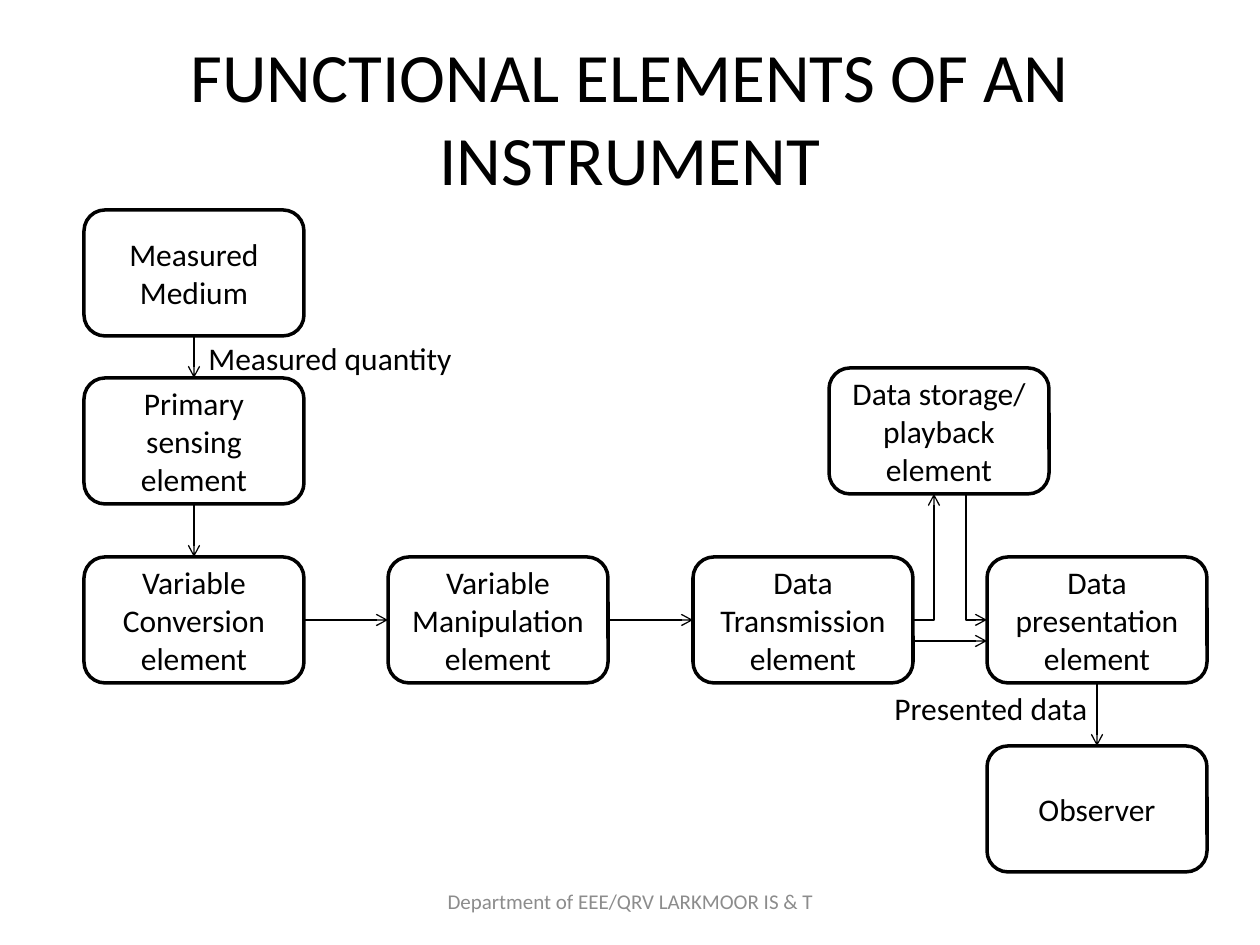
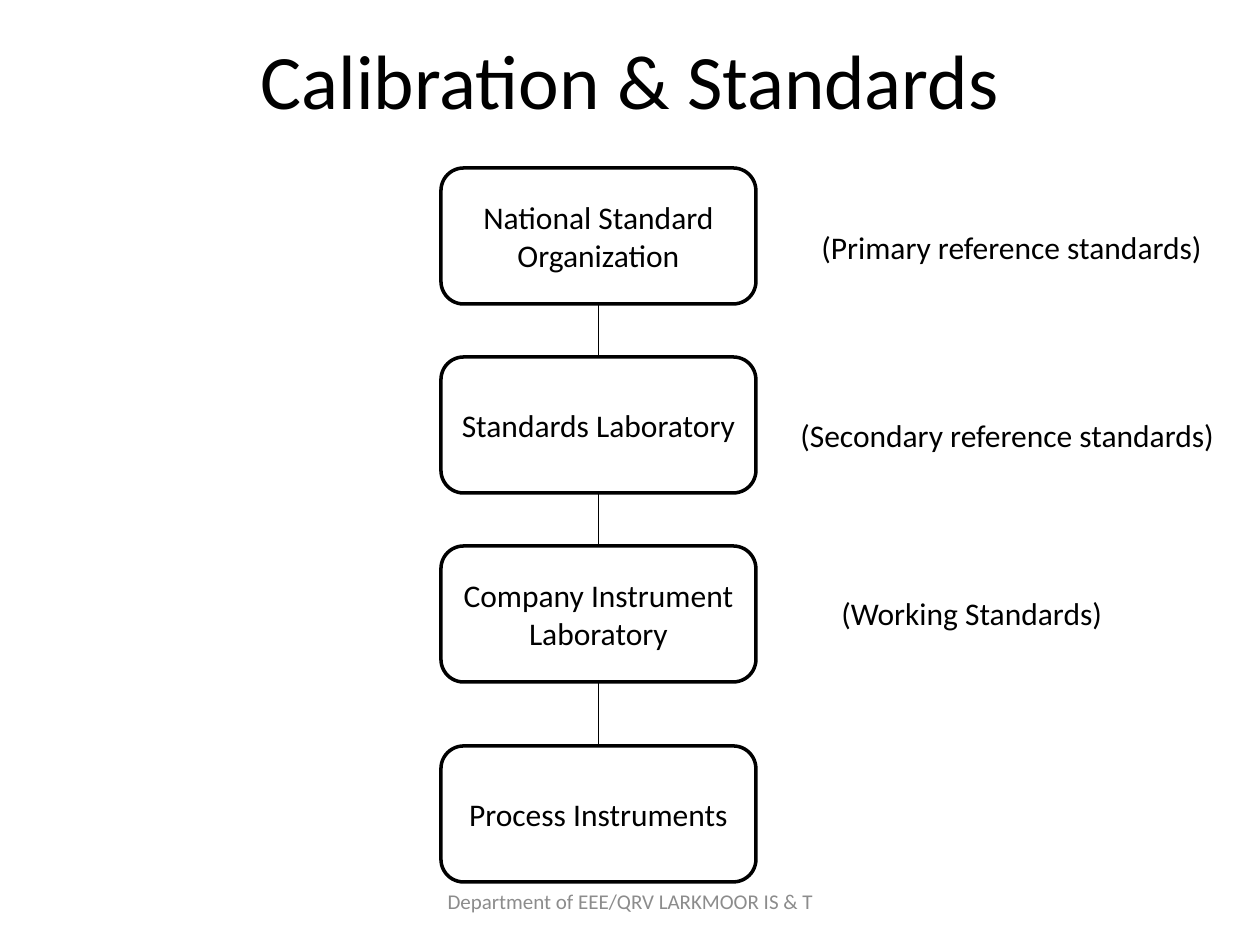
from lxml import etree
from pptx import Presentation
from pptx.dml.color import RGBColor
from pptx.enum.shapes import MSO_CONNECTOR, MSO_SHAPE
from pptx.enum.text import MSO_ANCHOR, MSO_AUTO_SIZE, PP_ALIGN
from pptx.oxml.ns import qn
from pptx.util import Emu, Pt

STRAIGHT, ELBOW = MSO_CONNECTOR.STRAIGHT, MSO_CONNECTOR.ELBOW
ROUNDED = MSO_SHAPE.ROUNDED_RECTANGLE
LEFT, CENTER = PP_ALIGN.LEFT, PP_ALIGN.CENTER
MIDDLE, TOP = MSO_ANCHOR.MIDDLE, MSO_ANCHOR.TOP
TOP_SIDE, LEFT_SIDE, BOTTOM_SIDE, RIGHT_SIDE = range(4)
TITLE_ONLY = 5

FONT = "Calibri"
COLORS = {"ink": "000000", "paper": "FFFFFF", "footer": "8C8C8C"}
FOOTER = "Department of EEE/QRV LARKMOOR IS & T"
LABEL_HEIGHT = 50

# Functional elements: name -> (text, left, top)
COLUMNS = [84, 388, 693, 987]
CHAIN_TOP = 557
ELEMENT_SIZE = (220, 126)
ELEMENTS = {
    "medium": ("Measured Medium", COLUMNS[0], 210),
    "storage": ("Data storage/ playback element", 829, 368),
    "sensing": ("Primary sensing element", COLUMNS[0], 378),
    "conversion": ("Variable Conversion element", COLUMNS[0], CHAIN_TOP),
    "manipulation": ("Variable Manipulation element", COLUMNS[1], CHAIN_TOP),
    "transmission": ("Data Transmission element", COLUMNS[2], CHAIN_TOP),
    "presentation": ("Data presentation element", COLUMNS[3], CHAIN_TOP),
    "observer": ("Observer", COLUMNS[3], 746),
}
DOWN_FLOWS = [("medium", "sensing"), ("sensing", "conversion"),
              ("presentation", "observer")]
RIGHT_FLOWS = [("conversion", "manipulation"), ("manipulation", "transmission")]
# (text, left, top, width)
FLOW_LABELS = [("Measured quantity", 196, 333, 272),
               ("Presented data", 882, 683, 220)]

# Calibration levels: (text, top)
LEVEL_LEFT, LEVEL_SIZE = 441, (315, 136)
LEVELS = [("National Standard Organization", 168),
          ("Standards Laboratory", 357),
          ("Company Instrument Laboratory", 546),
          ("Process Instruments", 746)]
LEVEL_LABELS = [("(Primary reference standards)", 809, 222, 411),
                ("(Secondary reference standards)", 788, 410, 443),
                ("(Working Standards)", 829, 588, 289)]


def px(*lengths):
    """Turn pixels, 126 to the inch, into EMU."""
    return [Emu(round(length * 914400 / 126)) for length in lengths]


def write(frame, text, size=18, color="ink", align=CENTER, anchor=MIDDLE, wrap=True):
    frame.word_wrap = wrap
    frame.vertical_anchor = anchor
    para = frame.paragraphs[0]
    para.alignment = align
    span = para.add_run()
    span.text = text
    span.font.name = FONT
    span.font.size = Pt(size)
    span.font.color.rgb = RGBColor.from_string(COLORS[color])


def add_page(deck, title, area, size):
    page = deck.slides.add_slide(deck.slide_layouts[TITLE_ONLY])
    heading = page.shapes.title
    heading.left, heading.top, heading.width, heading.height = px(*area)
    write(heading.text_frame, title, size=size)
    footer = page.shapes.add_textbox(*px(431, 876, 399, LABEL_HEIGHT))
    write(footer.text_frame, FOOTER, size=12, color="footer")
    return page


def add_box(page, text, left, top, size):
    box = page.shapes.add_shape(ROUNDED, *px(left, top, *size))
    box.shadow.inherit = False
    box.fill.solid()
    box.fill.fore_color.rgb = RGBColor.from_string(COLORS["paper"])
    box.line.color.rgb = RGBColor.from_string(COLORS["ink"])
    box.line.width = Pt(2)
    write(box.text_frame, text)
    return box


def add_label(page, text, left, top, width):
    label = page.shapes.add_textbox(*px(left, top, width, LABEL_HEIGHT))
    write(label.text_frame, text, align=LEFT, anchor=TOP, wrap=False)
    label.text_frame.auto_size = MSO_AUTO_SIZE.SHAPE_TO_FIT_TEXT


def add_line(page, points=(0, 0, 0, 0), kind=STRAIGHT, arrow=None):
    """Draw a connector; arrow is None, "headEnd" (start) or "tailEnd" (end)."""
    line = page.shapes.add_connector(kind, *px(*points))
    line.line.color.rgb = RGBColor.from_string(COLORS["ink"])
    line.line.width = Pt(0.75)
    properties = line._element.spPr
    if kind == ELBOW:
        properties.find(qn("a:prstGeom")).set("prst", "bentConnector2")
    if arrow:
        etree.SubElement(properties.find(qn("a:ln")), qn(f"a:{arrow}"), type="arrow")
    etree.SubElement(properties, qn("a:effectLst"))
    return line


def join(page, start, start_side, end, end_side, arrow=None):
    line = add_line(page, arrow=arrow)
    line.begin_connect(start, start_side)
    line.end_connect(end, end_side)


def build_functional_elements(deck):
    page = add_page(deck, "FUNCTIONAL ELEMENTS OF AN INSTRUMENT",
                    (63, 38, 1134, 157), 39.6)
    boxes = {name: add_box(page, *element, ELEMENT_SIZE)
             for name, element in ELEMENTS.items()}
    for start, end in DOWN_FLOWS:
        join(page, boxes[start], BOTTOM_SIDE, boxes[end], TOP_SIDE, "tailEnd")
    for start, end in RIGHT_FLOWS:
        join(page, boxes[start], RIGHT_SIDE, boxes[end], LEFT_SIDE, "tailEnd")

    width, height = ELEMENT_SIZE
    sender, receiver = COLUMNS[2] + width, COLUMNS[3]
    middle = CHAIN_TOP + height // 2
    storage_bottom = ELEMENTS["storage"][2] + height
    add_line(page, (sender, middle + 21, receiver, middle + 21), arrow="tailEnd")
    add_line(page, (sender, middle, sender + 21, storage_bottom), ELBOW, "tailEnd")
    add_line(page, (receiver, middle, receiver - 21, storage_bottom), ELBOW, "headEnd")
    for label in FLOW_LABELS:
        add_label(page, *label)


def build_calibration(deck):
    page = add_page(deck, "Calibration & Standards", (0, 0, 1260, 157), 44)
    boxes = [add_box(page, text, LEVEL_LEFT, top, LEVEL_SIZE) for text, top in LEVELS]
    for upper, lower in zip(boxes, boxes[1:]):
        join(page, upper, BOTTOM_SIDE, lower, TOP_SIDE)
    for label in LEVEL_LABELS:
        add_label(page, *label)


def main():
    deck = Presentation()
    deck.slide_width, deck.slide_height = px(1260, 945)
    build_functional_elements(deck)
    build_calibration(deck)
    deck.save("out.pptx")


if __name__ == "__main__":
    main()
